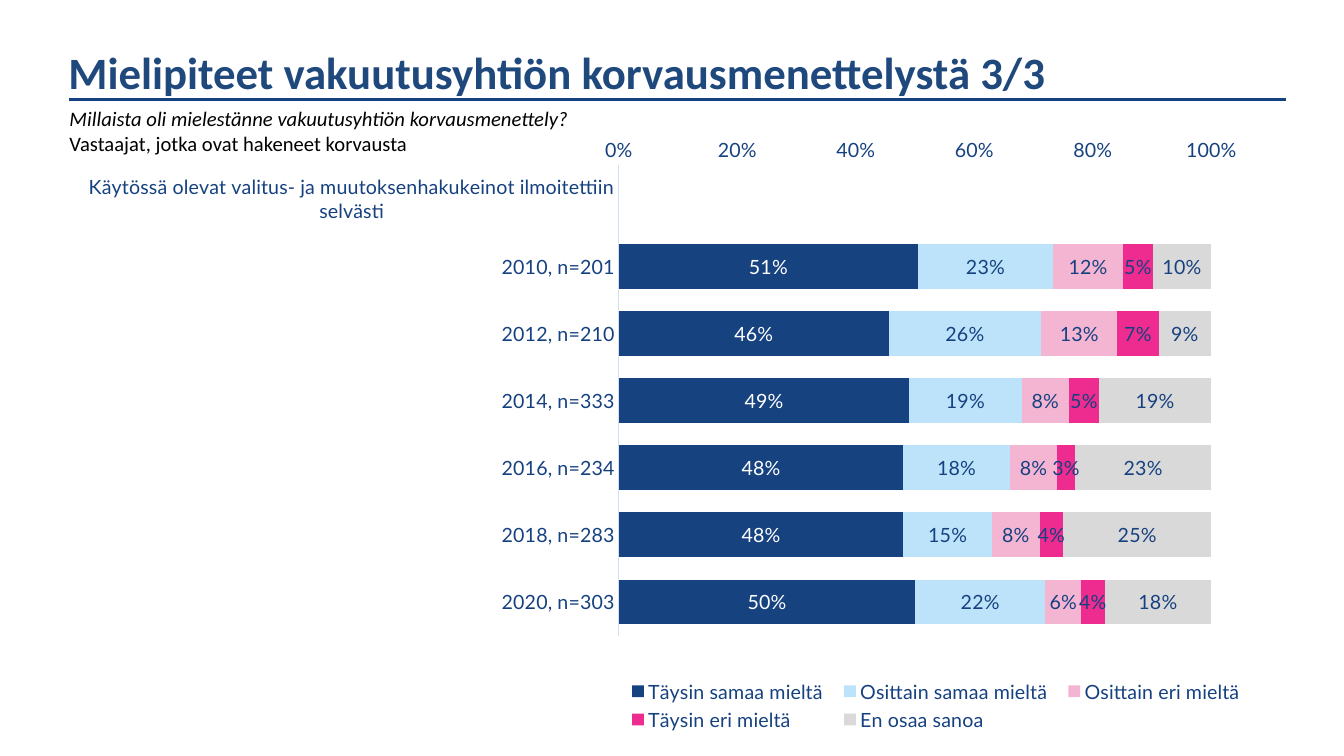
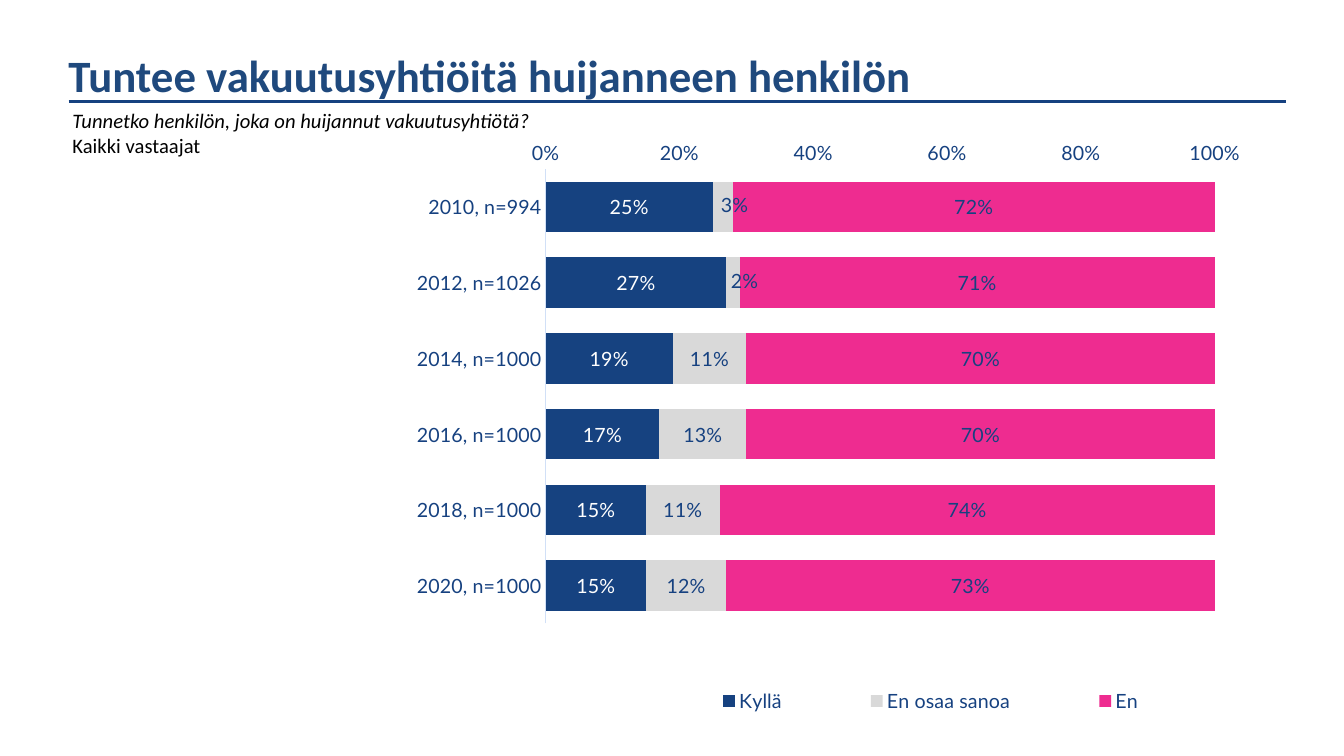
from lxml import etree
from pptx import Presentation
from pptx.chart.data import CategoryChartData
from pptx.dml.color import RGBColor
from pptx.enum.chart import (XL_AXIS_CROSSES, XL_CHART_TYPE,
                             XL_LEGEND_POSITION, XL_TICK_MARK)
from pptx.enum.shapes import MSO_CONNECTOR
from pptx.oxml.ns import qn
from pptx.util import Inches, Pt

BAR = XL_CHART_TYPE.BAR_STACKED_100
BOTTOM = XL_LEGEND_POSITION.BOTTOM
LAST = XL_AXIS_CROSSES.MAXIMUM
NO_TICK = XL_TICK_MARK.NONE
STRAIGHT = MSO_CONNECTOR.STRAIGHT

WIDE, HIGH = Inches(13.33), Inches(7.5)
HEAD_FONT, DATA_FONT = "Calibri", "Lato"
COLORS = {
    "title": "1F497D", "text": "000000", "ink": "164180", "axis": "D1E0F7",
    "navy": "164280", "sky": "BCE3FA", "rose": "F4B5D3", "pink": "EE2C90",
    "gray": "D9D9D9", "white": "FFFFFF",
}


def color(name):
    return RGBColor.from_string(COLORS[name])


def area(left, top, width, height):
    return (round(WIDE * left / 100), round(HIGH * top / 100),
            round(WIDE * width / 100), round(HIGH * height / 100))


def style(font, size, tone, name=DATA_FONT, bold=False, italic=False):
    font.size, font.name = Pt(size), name
    font.bold, font.italic = bold, italic
    font.color.rgb = color(tone)


def add_text(slide, lines, box, size, tone, bold=False, slant=()):
    frame = slide.shapes.add_textbox(*area(*box)).text_frame
    frame.word_wrap = True
    for i, line in enumerate(lines):
        para = frame.paragraphs[0] if i == 0 else frame.add_paragraph()
        run = para.add_run()
        run.text = line
        style(run.font, size, tone, HEAD_FONT, bold, i in slant)


def add_rule(slide, top):
    left, y, width, _ = area(5.1, top, 90.62, 0)
    rule = slide.shapes.add_connector(STRAIGHT, left, y, left + width, y)
    rule.line.color.rgb = color("ink")
    rule.line.width = Pt(2.25)
    rule._element.spPr.append(etree.Element(qn("a:effectLst")))


def add_head(slide, title, lines, top, rule, left):
    add_rule(slide, rule)
    add_text(slide, [title], (4.35, top, 88.97, 8.53), 32, "title", bold=True)
    add_text(slide, lines, (left, rule + 0.2, 91, 7.87), 14.7, "text",
             slant=(0,))


def set_place(item, index, **parts):
    for old in item.findall(qn("c:layout")):
        item.remove(old)
    layout = etree.Element(qn("c:layout"))
    manual = etree.SubElement(layout, qn("c:manualLayout"))
    for tag, value in parts.items():
        etree.SubElement(manual, qn("c:" + tag)).set("val", str(value))
    item.insert(index, layout)


def set_frame(item, index, box, **inner):
    x, y, w, h = box
    set_place(item, index, **inner, xMode="edge", yMode="edge",
              x=x, y=y, w=w, h=h)


def style_axes(chart):
    cats, vals = chart.category_axis, chart.value_axis
    for axis in (cats, vals):
        axis.major_tick_mark = axis.minor_tick_mark = NO_TICK
        axis.has_major_gridlines = False
        style(axis.tick_labels.font, 14, "ink")
    cats.reverse_order = True
    cats.crosses = LAST
    cats.format.line.color.rgb = color("axis")
    cats.format.line.width = Pt(0.75)
    vals.minimum_scale, vals.maximum_scale, vals.major_unit = 0, 1, 0.2
    vals.format.line.fill.background()
    vals.tick_labels.number_format = "0%"
    vals.tick_labels.number_format_is_linked = False


def style_bars(series, tone):
    series.format.fill.solid()
    series.format.fill.fore_color.rgb = color(tone)
    labels = series.data_labels
    labels.show_value = True
    labels.number_format = "0%"
    labels.number_format_is_linked = False
    style(labels.font, 14, "white" if tone == "navy" else "ink")


def shift_label(series, point):
    style(series.points[point].data_label.font, 14, "ink")
    for label in series._element.iter(qn("c:dLbl")):
        if label.find(qn("c:idx")).get("val") == str(point):
            set_place(label, 1, x=0.01, y=-0.004)


def add_bars(slide, box, cats, rows, plot, legend):
    data = CategoryChartData(number_format="0%")
    data.categories = cats
    for name, _, shares in rows:
        data.add_series(name, [None if n is None else n / 100 for n in shares])
    chart = slide.shapes.add_chart(BAR, *area(*box), data).chart
    chart.has_title = False
    style(chart.font, 14, "ink")
    style_axes(chart)
    bars = chart.plots[0]
    bars.gap_width, bars.overlap = 50, 100
    bars.vary_by_categories = False
    for series, (_, tone, _) in zip(bars.series, rows):
        style_bars(series, tone)
    chart.has_legend = True
    chart.legend.position = BOTTOM
    chart.legend.include_in_layout = False
    style(chart.legend.font, 14, "ink")
    set_frame(chart.legend._element, 1, legend)
    set_frame(chart._chartSpace.chart.plotArea, 0, plot, layoutTarget="inner")
    return bars


def name_years(counts):
    return [f"{2010 + 2 * i}, n={n}" for i, n in enumerate(counts)]


def add_claims(slide):
    add_head(slide, "Mielipiteet vakuutusyhtiön korvausmenettelystä 3/3",
             ["Millaista oli mielestänne vakuutusyhtiön korvausmenettely?",
              "Vastaajat, jotka ovat hakeneet korvausta"], 5.2, 13.2, 4.43)
    topic = ("Käytössä olevat valitus- ja muutoksenhakukeinot "
             "ilmoitettiin selvästi")
    rows = [
        ("Täysin samaa mieltä", "navy", [None, 51, 46, 49, 48, 48, 50]),
        ("Osittain samaa mieltä", "sky", [None, 23, 26, 19, 18, 15, 22]),
        ("Osittain eri mieltä", "rose", [None, 12, 13, 8, 8, 8, 6]),
        ("Täysin eri mieltä", "pink", [None, 5, 7, 5, 3, 4, 4]),
        ("En osaa sanoa", "gray", [None, 10, 9, 19, 23, 25, 18]),
    ]
    cats = [topic] + name_years([201, 210, 333, 234, 283, 303])
    add_bars(slide, (2.25, 17.07, 91.07, 80.27), cats, rows,
             (0.481, 0.06, 0.484, 0.775), (0.48, 0.9, 0.52, 0.1))


def add_fraud(slide):
    add_head(slide, "Tuntee vakuutusyhtiöitä huijanneen henkilön",
             ["Tunnetko henkilön, joka on huijannut vakuutusyhtiötä?",
              "Kaikki vastaajat"], 5.6, 13.47, 4.65)
    rows = [
        ("Kyllä", "navy", [25, 27, 19, 17, 15, 15]),
        ("En osaa sanoa", "gray", [3, 2, 11, 13, 11, 12]),
        ("En", "pink", [72, 71, 70, 70, 74, 73]),
    ]
    cats = name_years([994, 1026] + [1000] * 4)
    bars = add_bars(slide, (7.13, 17.6, 86.27, 78.27), cats, rows,
                    (0.388, 0.061, 0.577, 0.768), (0.47, 0.92, 0.5, 0.08))
    for point in (0, 1):
        shift_label(bars.series[1], point)


def main():
    deck = Presentation()
    deck.slide_width, deck.slide_height = WIDE, HIGH
    for build in (add_claims, add_fraud):
        build(deck.slides.add_slide(deck.slide_layouts[6]))
    deck.save("out.pptx")


if __name__ == "__main__":
    main()
